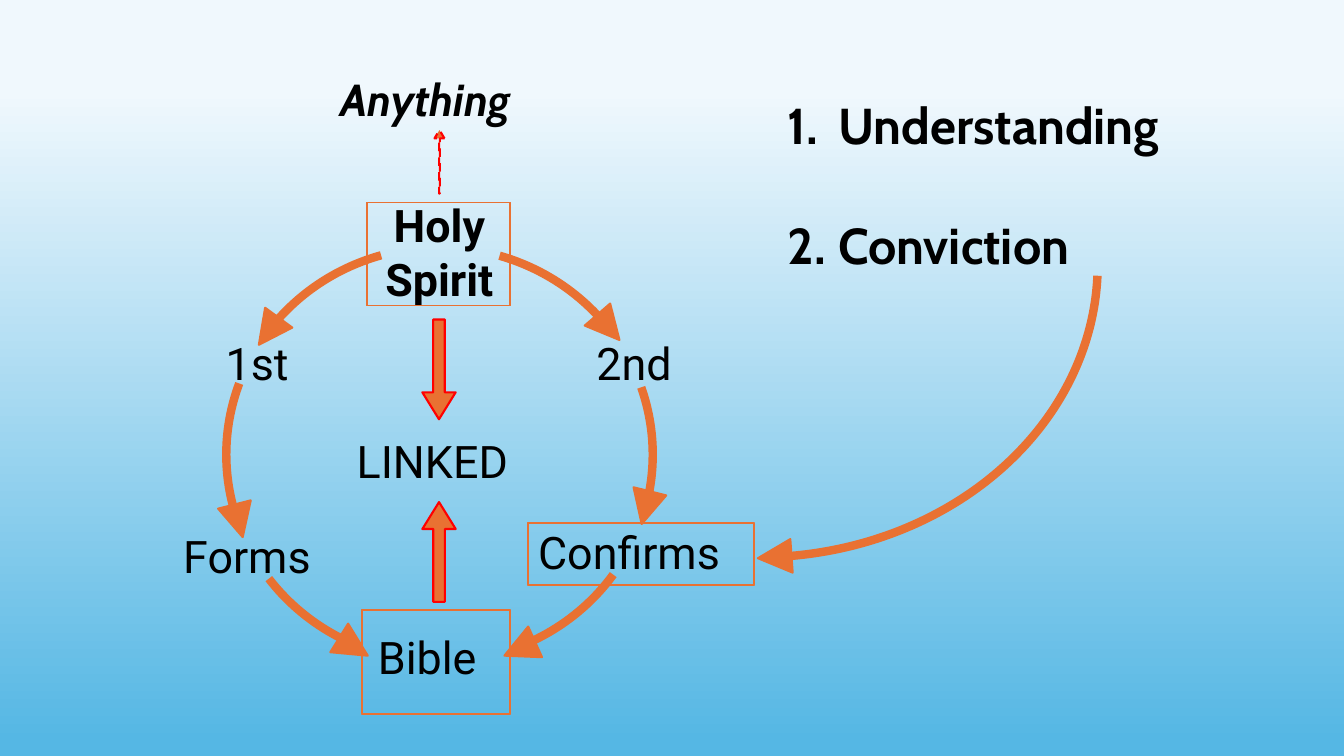
"""Build the slide linking the Holy Spirit and the Bible in a cycle."""
from pptx import Presentation, util as u
from pptx.dml.color import RGBColor
from pptx.enum import dml, shapes, text

THEME = {
    "sky": [(0.12, "F0F8FD"), (0.98, "55B7E4")],
    "ink": "000000", "orange": "E97132", "red": "FF0000",
    "body": "Roboto", "display": "Cabin",
    "label": 32, "list": 36, "list_gap": 43,
    "thin": 1, "edge": 1.5, "arc": 6, "head": 24,
}
POINTS = ["1.\tUnderstanding", "2. \tConviction"]
LABELS = [
    ("1st", (154.1, 236.2, 63.4, 46.1)),
    ("Forms", (123.8, 374.4, 123.8, 46.1)),
    ("Bible", (262.8, 446.4, 102.2, 46.1)),
    ("2nd", (419, 236.2, 81.4, 46.1)),
    ("Confirms", (377.3, 371.5, 169.2, 46.1)),
    ("LINKED", (247.7, 306, 133.2, 46.1)),
]
RING = (161.7, 176.7, 304.6, 295.9)
SWEEP = (298.1, -20.2, 486, 418.3)
CURVES = [
    (RING, (213.99, 253.65), (180, 224.6), 36.2),
    (RING, (160.02, 199.54), (158.4, 360), 345.8),
    (RING, (112.11, 143.97), (240.5, 450), 301.9),
    (RING, (286.8, 322.68), (422.6, 221.8), 319.1),
    (RING, (341.58, 16.2), (449.3, 350.6), 14),
    (RING, (34.67, 63.87), (359.3, 451.4), 65.8),
    (SWEEP, (1.89, 84.41), (541.4, 385.9), 86),
]
BLOCK_ARROWS = [
    ((301.7, 228.2, 23.8, 71.3), 0, (0.346, 0.808), None),
    ((301.7, 358.6, 23.8, 71.3), 180, (0.346, 0.808), None),
    ((310.3, 92.9, 7.2, 45.4), 180, (0.066, 0.828), dml.MSO_LINE.DASH),
]
FRAMES = [
    ((377.3, 373.7, 161.3, 43.9), "edge"),
    ((262.1, 144.7, 102.2, 73.4), "thin"),
    ((258.5, 435.6, 105.8, 74.2), "edge"),
]


def color(name):
    return RGBColor.from_string(THEME[name])


def add_text(s, box, lines, font="body", size="label", bold=False,
             italic=False, align=text.PP_ALIGN.LEFT, gap=0):
    tf = s.shapes.add_textbox(*map(u.Pt, box)).text_frame
    tf.word_wrap = True
    tf.auto_size = text.MSO_AUTO_SIZE.SHAPE_TO_FIT_TEXT
    for i, line in enumerate(lines):
        p = tf.add_paragraph() if i else tf.paragraphs[0]
        p.alignment = align
        p.space_before = u.Pt(gap if i else 0)
        r = p.add_run()
        r.text = line
        r.font.name, r.font.size = THEME[font], u.Pt(THEME[size])
        r.font.bold, r.font.italic = bold, italic
        r.font.color.rgb = color("ink")


def add_shape(parent, kind, box, adjust=(), rotation=0, fill=None,
              line="orange", width="edge"):
    sp = parent.shapes.add_shape(kind, *map(u.Pt, box))
    sp.shadow.inherit = False
    sp.rotation = rotation
    for i, value in enumerate(adjust):
        sp.adjustments[i] = value
    if fill:
        sp.fill.solid()
        sp.fill.fore_color.rgb = color(fill)
    else:
        sp.fill.background()
    sp.line.color.rgb = color(line)
    sp.line.width = u.Pt(THEME[width])
    return sp


def add_curve(s, oval, degrees, corner, rotation):
    kind, group, size = shapes.MSO_SHAPE, s.shapes.add_group_shape(), THEME["head"]
    add_shape(group, kind.ARC, oval, [d * 0.6 for d in degrees], width="arc")
    add_shape(group, kind.FLOWCHART_MERGE, (*corner, size, size),
              rotation=rotation, fill="orange")


def main():
    prs = Presentation()
    prs.slide_width, prs.slide_height = u.Pt(960), u.Pt(540)
    s = prs.slides.add_slide(prs.slide_layouts[6])
    sky = s.background.fill
    sky.gradient()
    sky.gradient_angle = 270
    for stop, (position, rgb) in zip(sky.gradient_stops, THEME["sky"]):
        stop.position = position
        stop.color.rgb = RGBColor.from_string(rgb)

    add_text(s, (555.8, 63.4, 345.6, 138.2), POINTS, "display", "list",
             bold=True, gap=THEME["list_gap"])
    add_text(s, (263.5, 137.5, 100.8, 85), ["Holy Spirit"], bold=True,
             align=text.PP_ALIGN.CENTER)
    add_text(s, (236.2, 47.5, 167.8, 46.1), ["Anything"], "display",
             bold=True, italic=True)
    for label, box in LABELS:
        add_text(s, box, [label])
    for curve in CURVES:
        add_curve(s, *curve)
    for box, rotation, adjust, dash in BLOCK_ARROWS:
        sp = add_shape(s, shapes.MSO_SHAPE.DOWN_ARROW, box, adjust, rotation,
                       "orange", "red")
        if dash:
            sp.line.dash_style = dash
    for box, width in FRAMES:
        add_shape(s, shapes.MSO_SHAPE.FRAME, box, [0], width=width)
    prs.save("out.pptx")


if __name__ == "__main__":
    main()
